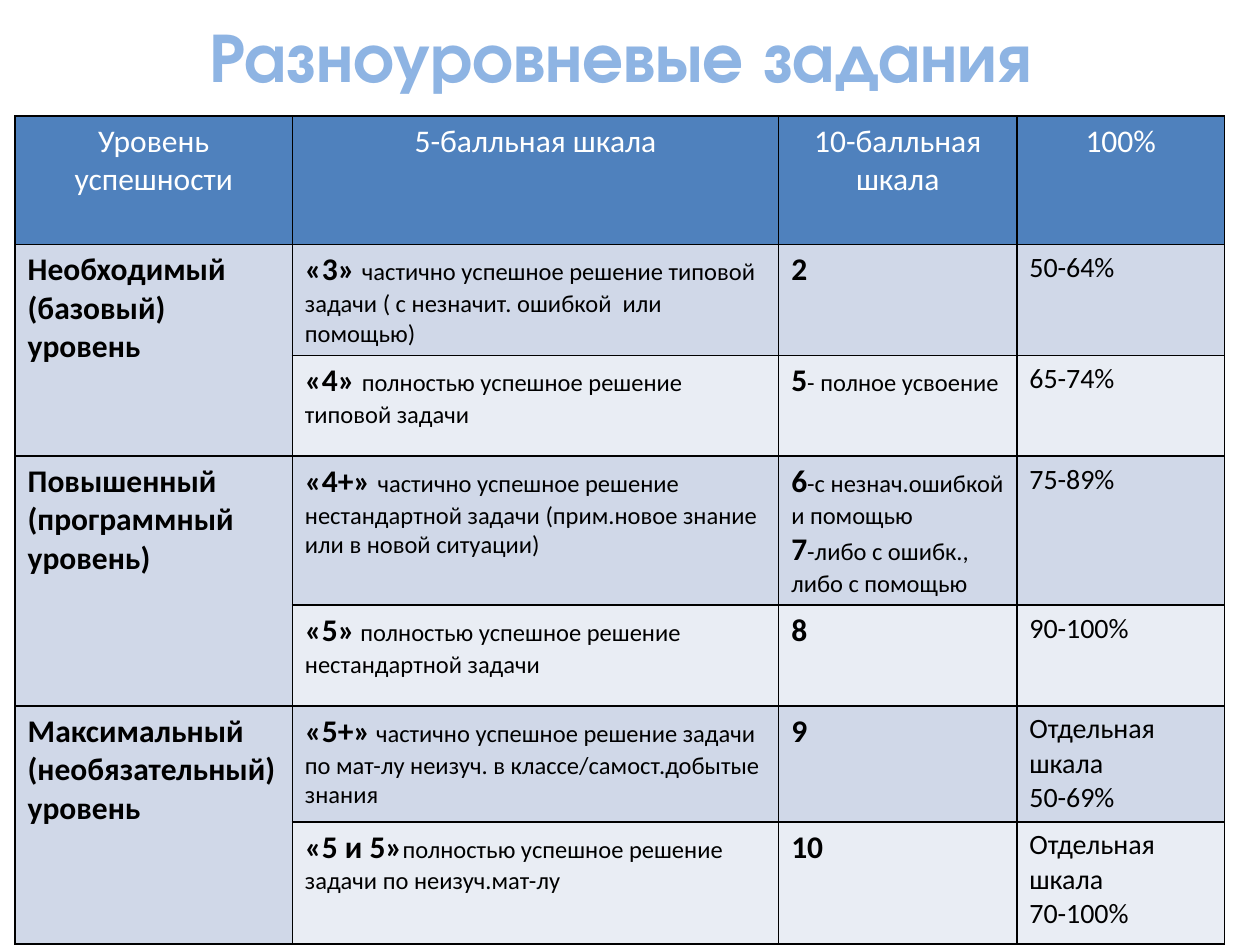
from lxml.etree import SubElement
from pptx import Presentation
from pptx.dml.color import RGBColor
from pptx.enum.text import MSO_ANCHOR, PP_ALIGN
from pptx.oxml.ns import qn
from pptx.util import Inches, Pt

TITLE_BLUE = RGBColor(0x8E, 0xB4, 0xE3)
HEADER_BLUE = RGBColor(0x4F, 0x81, 0xBD)
BANDS = RGBColor(0xD0, 0xD8, 0xE8), RGBColor(0xE9, 0xED, 0xF4)
WHITE = RGBColor(0xFF, 0xFF, 0xFF)
BLACK = RGBColor(0, 0, 0)

COLS = 2.2, 3.86, 1.89, 1.65
ROWS = 1.02, 0.88, 0.8, 1.18, 0.8, 0.92, 0.97
LARGE, MEDIUM, SMALL = 18, 16, 14

HEADERS = "Уровень успешности", "5-балльная шкала", "10-балльная шкала", "100%"
LEVELS = (
    "Необходимый (базовый) уровень",
    "Повышенный (программный уровень)",
    "Максимальный (необязательный) уровень",
)
# Five-point mark, ten-point marks, percentage lines; a mark is (grade, comment)
GRADES = [
    (("«3» ", "частично успешное решение типовой задачи ( с незначит. ошибкой  или помощью)"),
     [("2", "")], ["50-64%"]),
    (("«4» ", "полностью успешное решение типовой задачи"),
     [("5", "- полное усвоение")], ["65-74%"]),
    (("«4+» ", "частично успешное решение нестандартной задачи "
      "(прим.новое знание или в новой ситуации)"),
     [("6", "-с незнач.ошибкой и помощью"), ("7", "-либо с ошибк., либо с помощью")],
     ["75-89%"]),
    (("«5»", " полностью успешное решение нестандартной задачи"),
     [("8", "")], ["90-100%"]),
    (("«5+»", " частично успешное решение задачи по мат-лу неизуч. "
      "в классе/самост.добытые знания"),
     [("9", "")], ["Отдельная шкала", "50-69%"]),
    (("«5 и 5»", "полностью успешное решение задачи по неизуч.мат-лу"),
     [("10", "")], ["Отдельная шкала", "70-100%"]),
]


def style_cell(cell, fill):
    """Give the cell a solid fill and thin black borders."""
    cell.fill.solid()
    cell.fill.fore_color.rgb = fill
    tc_pr = cell._tc.get_or_add_tcPr()
    for i, side in enumerate(("lnL", "lnR", "lnT", "lnB")):
        ln = SubElement(tc_pr, qn(f"a:{side}"), w=str(Pt(1)))
        SubElement(SubElement(ln, qn("a:solidFill")), qn("a:srgbClr"), val=str(BLACK))
        tc_pr.insert(i, ln)


def write_cell(cell, paragraphs, color=BLACK, align=PP_ALIGN.LEFT):
    """Write paragraphs, each a list of (text, size, bold) runs."""
    tf = cell.text_frame
    for i, runs in enumerate(paragraphs):
        p = tf.paragraphs[0] if i == 0 else tf.add_paragraph()
        p.alignment = align
        p.font.name = "Calibri"
        for text, size, bold in runs:
            r = p.add_run()
            r.text = text
            r.font.name = "Calibri"
            r.font.size, r.font.bold = Pt(size), bold
            r.font.color.rgb = color


def mark_runs(mark):
    grade, comment = mark
    runs = [(grade, LARGE, True)]
    return runs + [(comment, SMALL, False)] if comment else runs


def add_title(s, left, top, width, height):
    title = s.shapes.title
    title.left, title.top, title.width, title.height = left, top, width, height
    tf = title.text_frame
    tf.vertical_anchor = MSO_ANCHOR.MIDDLE
    p = tf.paragraphs[0]
    p.text = "Разноуровневые задания"
    p.alignment = PP_ALIGN.CENTER
    p.font.name, p.font.size, p.font.bold = "TeX Gyre Adventor", Pt(40), True
    p.font.color.rgb = TITLE_BLUE


def add_grade_table(s, left, top, width, height):
    table = s.shapes.add_table(len(ROWS), len(COLS), left, top, width, height).table
    for column, share in zip(table.columns, COLS):
        column.width = int(width * share / sum(COLS))
    for row, share in zip(table.rows, ROWS):
        row.height = int(height * share / sum(ROWS))

    for r in range(len(ROWS)):
        for c in range(len(COLS)):
            band = BANDS[0] if c == 0 else BANDS[(r - 1) % 2]
            style_cell(table.cell(r, c), band if r else HEADER_BLUE)
    for c, text in enumerate(HEADERS):
        write_cell(table.cell(0, c), [[(text, LARGE, False)]], WHITE, PP_ALIGN.CENTER)
    for i, level in enumerate(LEVELS):
        first = table.cell(1 + 2 * i, 0)
        first.merge(table.cell(2 + 2 * i, 0))
        write_cell(first, [[(level, LARGE, True)]])
    for r, (five, tens, percents) in enumerate(GRADES, start=1):
        write_cell(table.cell(r, 1), [mark_runs(five)])
        write_cell(table.cell(r, 2), [mark_runs(mark) for mark in tens])
        write_cell(table.cell(r, 3), [[(line, MEDIUM, False)] for line in percents])


def main():
    prs = Presentation()
    prs.slide_width, prs.slide_height = Inches(10), Inches(7.5)
    s = prs.slides.add_slide(prs.slide_layouts[5])
    add_title(s, Inches(0.43), Inches(-0.19), Inches(9), Inches(1.25))
    add_grade_table(s, Inches(0.12), Inches(0.92), Inches(sum(COLS)), Inches(sum(ROWS)))
    prs.save("out.pptx")


if __name__ == "__main__":
    main()
